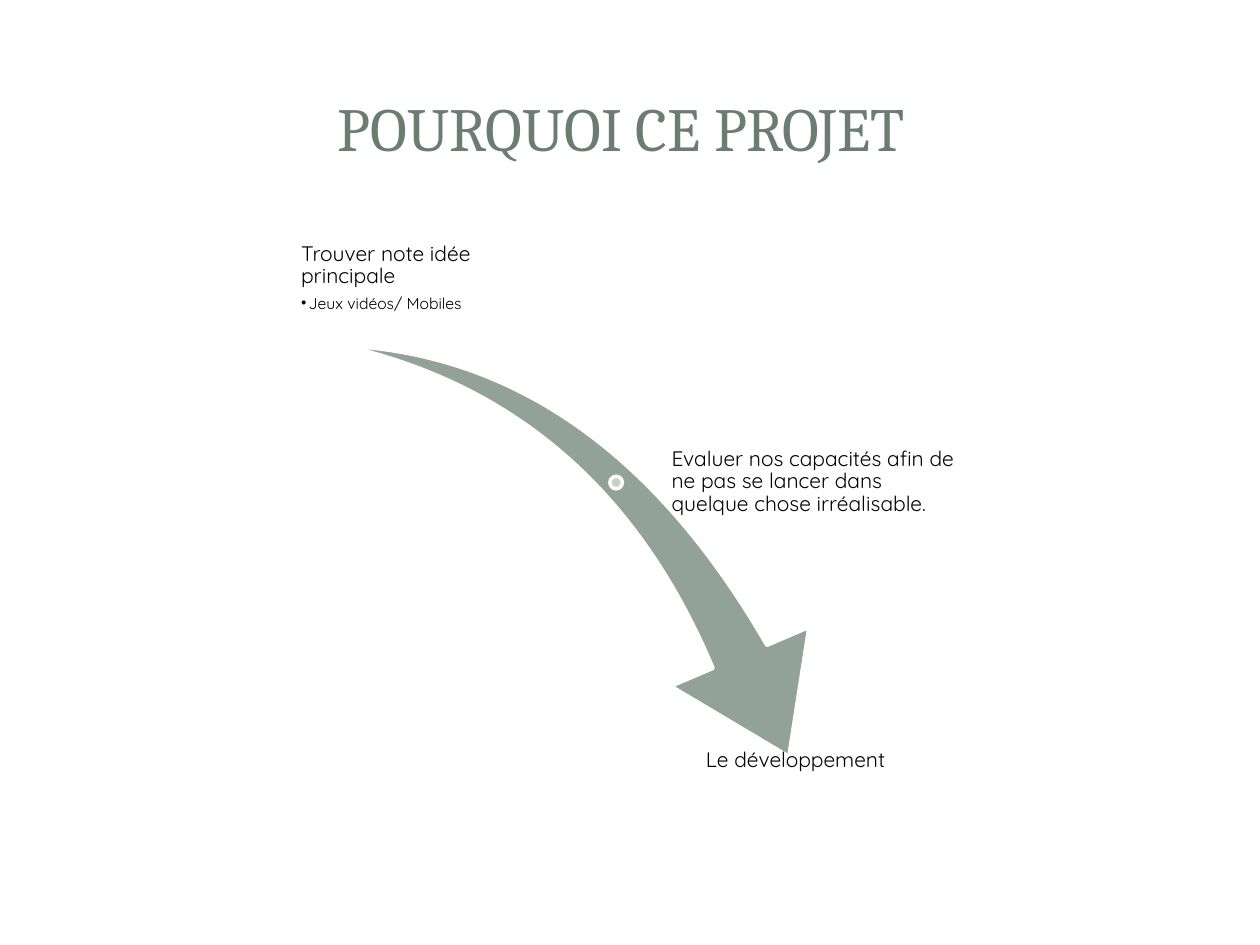
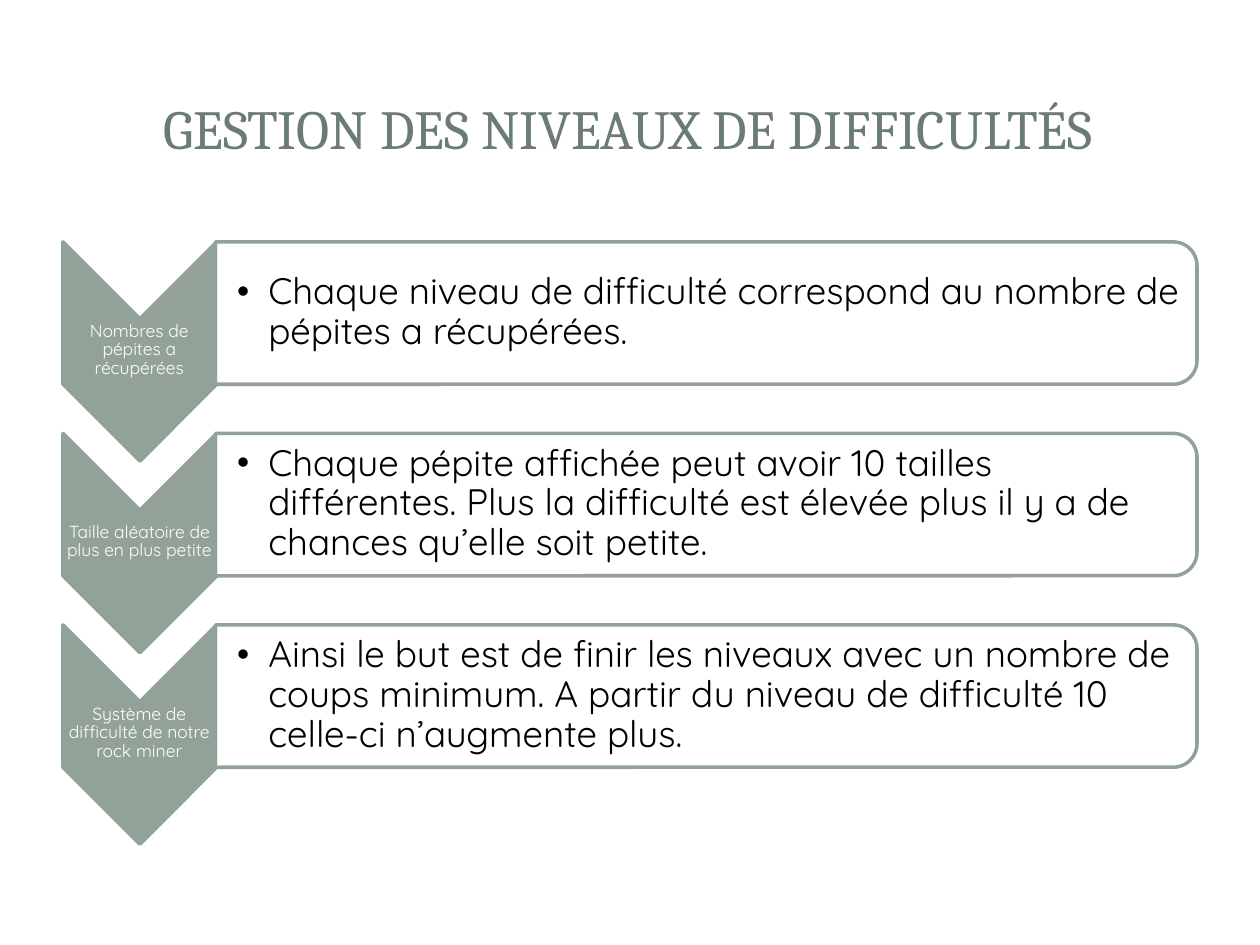
from dataclasses import dataclass

from lxml.etree import SubElement
from pptx import Presentation
from pptx.dml.color import RGBColor
from pptx.enum.shapes import MSO_SHAPE
from pptx.enum.text import MSO_ANCHOR, MSO_AUTO_SIZE, PP_ALIGN
from pptx.oxml.ns import qn
from pptx.util import Pt

PX = 9144
SLIDE_W, SLIDE_H = 1000, 750
SAGE, DARK_SAGE, PALE_SAGE = "93A299", "6B7D72", "C8CECA"
WHITE, BLACK = "FFFFFF", "000000"
TITLE_FONT, BODY_FONT = "Cambria", "Quicksand"
ROW_PITCH = 152


@dataclass(frozen=True)
class Box:
    left: int
    top: int
    width: int
    height: int

    def emu(self) -> tuple[int, int, int, int]:
        return self.left * PX, self.top * PX, self.width * PX, self.height * PX

    def down(self, distance: int) -> "Box":
        return Box(self.left, self.top + distance, self.width, self.height)


@dataclass(frozen=True)
class Panel:
    kind: MSO_SHAPE
    box: Box
    opacity: int = 100


@dataclass(frozen=True)
class Para:
    text: str
    size: float
    color: str = BLACK
    align: PP_ALIGN = PP_ALIGN.LEFT
    space_after: int = 4
    hang: int = 0


@dataclass(frozen=True)
class Stage:
    box: Box
    anchor: MSO_ANCHOR
    paras: tuple[Para, ...]


@dataclass(frozen=True)
class Level:
    label: str
    detail: str


PANELS = (
    Panel(MSO_SHAPE.ROUNDED_RECTANGLE, Box(10, 11, 980, 729)),
    Panel(MSO_SHAPE.RECTANGLE, Box(30, 30, 940, 145), 83),
    Panel(MSO_SHAPE.RECTANGLE, Box(41, 41, 917, 122)),
)

STAGES = (
    Stage(Box(237, 191, 195, 77), MSO_ANCHOR.TOP, (
        Para("Trouver note idée principale", 12),
        Para("Jeux vidéos/ Mobiles", 9, space_after=1, hang=6),
    )),
    Stage(Box(531, 344, 231, 77), MSO_ANCHOR.MIDDLE, (
        Para("Evaluer nos capacités afin de ne pas se lancer dans "
             "quelque chose irréalisable.", 12),
    )),
    Stage(Box(500, 593, 263, 77), MSO_ANCHOR.TOP, (
        Para("Le développement", 12, align=PP_ALIGN.CENTER),
    )),
)

LEVELS = (
    Level("Nombres de pépites a récupérées",
          "Chaque niveau de difficulté correspond au nombre de pépites a récupérées."),
    Level("Taille aléatoire de plus en plus petite",
          "Chaque pépite affichée peut avoir 10 tailles différentes. Plus la difficulté "
          "est élevée plus il y a de chances qu’elle soit petite."),
    Level("Système de difficulté de notre rock miner",
          "Ainsi le but est de finir les niveaux avec un nombre de coups minimum. "
          "A partir du niveau de difficulté 10 celle-ci n’augmente plus."),
)


def rgb(color: str) -> RGBColor:
    return RGBColor.from_string(color)


def style_runs(p, font: str, size: float, color: str) -> None:
    for r in p.runs:
        r.font.name = font
        r.font.size = Pt(size)
        r.font.color.rgb = rgb(color)


def add_figure(s, kind: MSO_SHAPE, box: Box, fill: str, line: str = "",
               rotation: float = 0, opacity: int = 100):
    sp = s.shapes.add_shape(kind, *box.emu())
    sp.shadow.inherit = False
    sp.rotation = rotation
    sp.fill.solid()
    sp.fill.fore_color.rgb = rgb(fill)
    if opacity < 100:
        color = sp._element.spPr.find(qn("a:solidFill")).find(qn("a:srgbClr"))
        SubElement(color, qn("a:alpha")).set("val", str(opacity * 1000))
    if line:
        sp.line.color.rgb = rgb(line)
        sp.line.width = Pt(2)
    else:
        sp.line.fill.background()
    return sp


def add_panels(s) -> None:
    for panel in PANELS:
        sp = add_figure(s, panel.kind, panel.box, WHITE, opacity=panel.opacity)
        if panel.kind == MSO_SHAPE.ROUNDED_RECTANGLE:
            sp.adjustments[0] = 0.02


def add_titled_slide(prs, title: str, size: float):
    s = prs.slides.add_slide(prs.slide_layouts[5])
    add_panels(s)
    sp = s.shapes.title
    sp._element.getparent().append(sp._element)
    sp.left, sp.top, sp.width, sp.height = Box(47, 44, 903, 114).emu()
    tf = sp.text_frame
    tf.text = title
    tf.word_wrap = True
    tf.auto_size = MSO_AUTO_SIZE.NONE
    tf.vertical_anchor = MSO_ANCHOR.MIDDLE
    p = tf.paragraphs[0]
    p.alignment = PP_ALIGN.CENTER
    style_runs(p, TITLE_FONT, size, DARK_SAGE)
    return s


def add_bullet(p, hang: int) -> None:
    pPr = p._p.get_or_add_pPr()
    pPr.set("marL", str(hang * PX))
    pPr.set("indent", str(-hang * PX))
    SubElement(pPr, qn("a:buFont")).set("typeface", BODY_FONT)
    SubElement(pPr, qn("a:buChar")).set("char", "•")


def add_text(s, box: Box, paras: tuple[Para, ...], anchor: MSO_ANCHOR,
             inset: int, left_inset: int) -> None:
    tf = s.shapes.add_textbox(*box.emu()).text_frame
    tf.word_wrap = True
    tf.vertical_anchor = anchor
    tf.margin_left = left_inset * PX
    tf.margin_top = tf.margin_right = tf.margin_bottom = inset * PX
    for i, para in enumerate(paras):
        p = tf.add_paragraph() if i else tf.paragraphs[0]
        p.text = para.text
        p.alignment = para.align
        p.line_spacing = 0.9
        p.space_after = Pt(para.space_after)
        if para.hang:
            add_bullet(p, para.hang)
        style_runs(p, BODY_FONT, para.size, para.color)


def build_project_slide(prs) -> None:
    s = add_titled_slide(prs, "POURQUOI CE PROJET ", 35)
    arrow = add_figure(s, MSO_SHAPE.SWOOSH_ARROW, Box(265, 287, 413, 288), SAGE, WHITE, 73.3)
    arrow.adjustments[0] = 0.16
    arrow.adjustments[1] = 0.31
    add_figure(s, MSO_SHAPE.OVAL, Box(484, 378, 10, 10), PALE_SAGE, WHITE)
    for stage in STAGES:
        add_text(s, stage.box, stage.paras, stage.anchor, 2, 2)


def add_level(s, level: Level, offset: int) -> None:
    add_figure(s, MSO_SHAPE.CHEVRON, Box(24, 218, 174, 122).down(offset), SAGE, SAGE, 90)
    add_text(s, Box(50, 252, 121, 52).down(offset),
             (Para(level.label, 10, WHITE, PP_ALIGN.CENTER),), MSO_ANCHOR.MIDDLE, 1, 1)
    add_figure(s, MSO_SHAPE.ROUND_2_SAME_RECTANGLE,
               Box(504, -141, 113, 779).down(offset), WHITE, SAGE, 90, 90)
    add_text(s, Box(171, 197, 773, 102).down(offset),
             (Para(level.detail, 21, space_after=3, hang=25),), MSO_ANCHOR.MIDDLE, 1, 17)


def build_levels_slide(prs) -> None:
    s = add_titled_slide(prs, "GESTION DES NIVEAUX DE DIFFICULTÉS", 31.5)
    for i, level in enumerate(LEVELS):
        add_level(s, level, i * ROW_PITCH)


def main() -> None:
    prs = Presentation()
    prs.slide_width = SLIDE_W * PX
    prs.slide_height = SLIDE_H * PX
    build_project_slide(prs)
    build_levels_slide(prs)
    prs.save("out.pptx")


if __name__ == "__main__":
    main()
